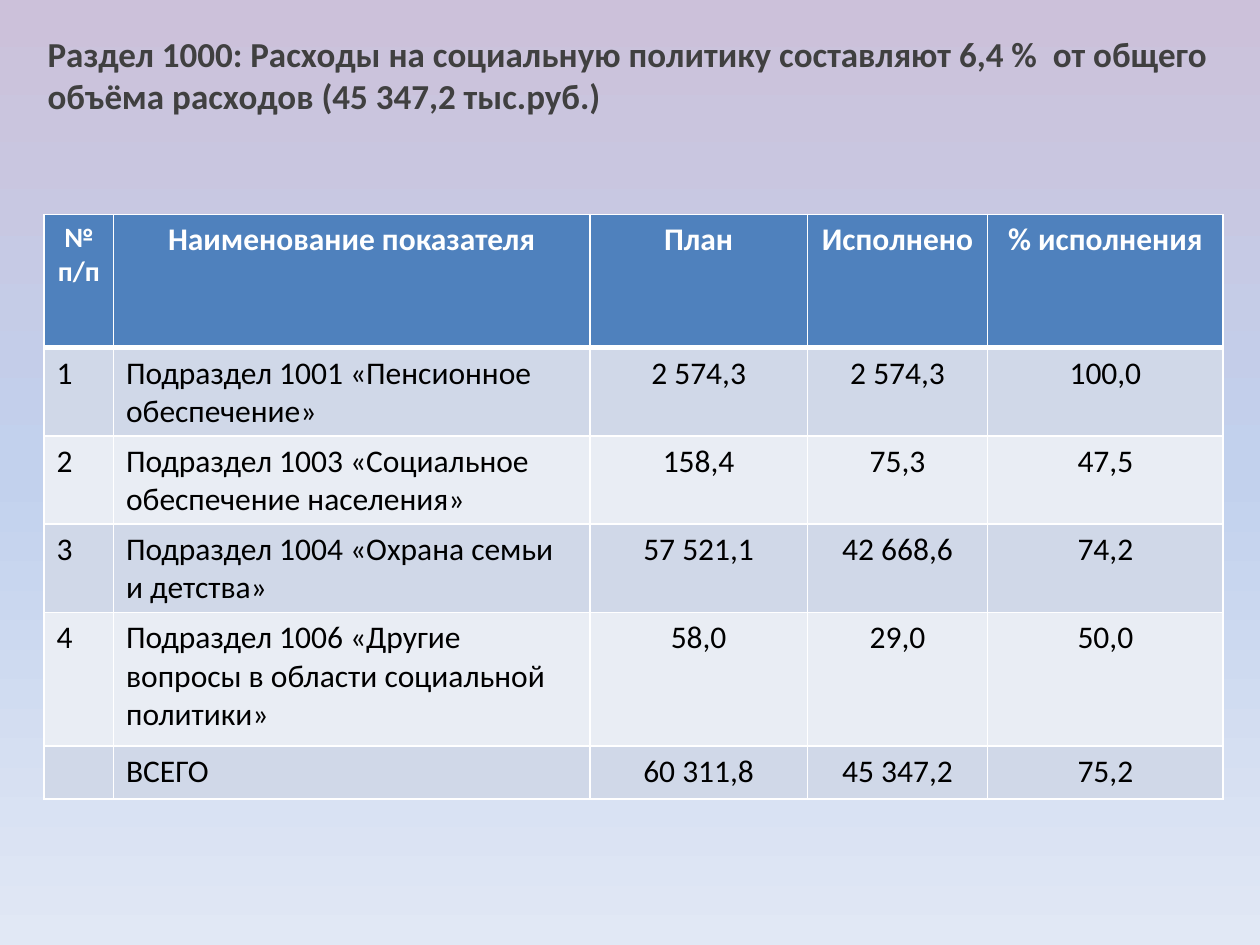
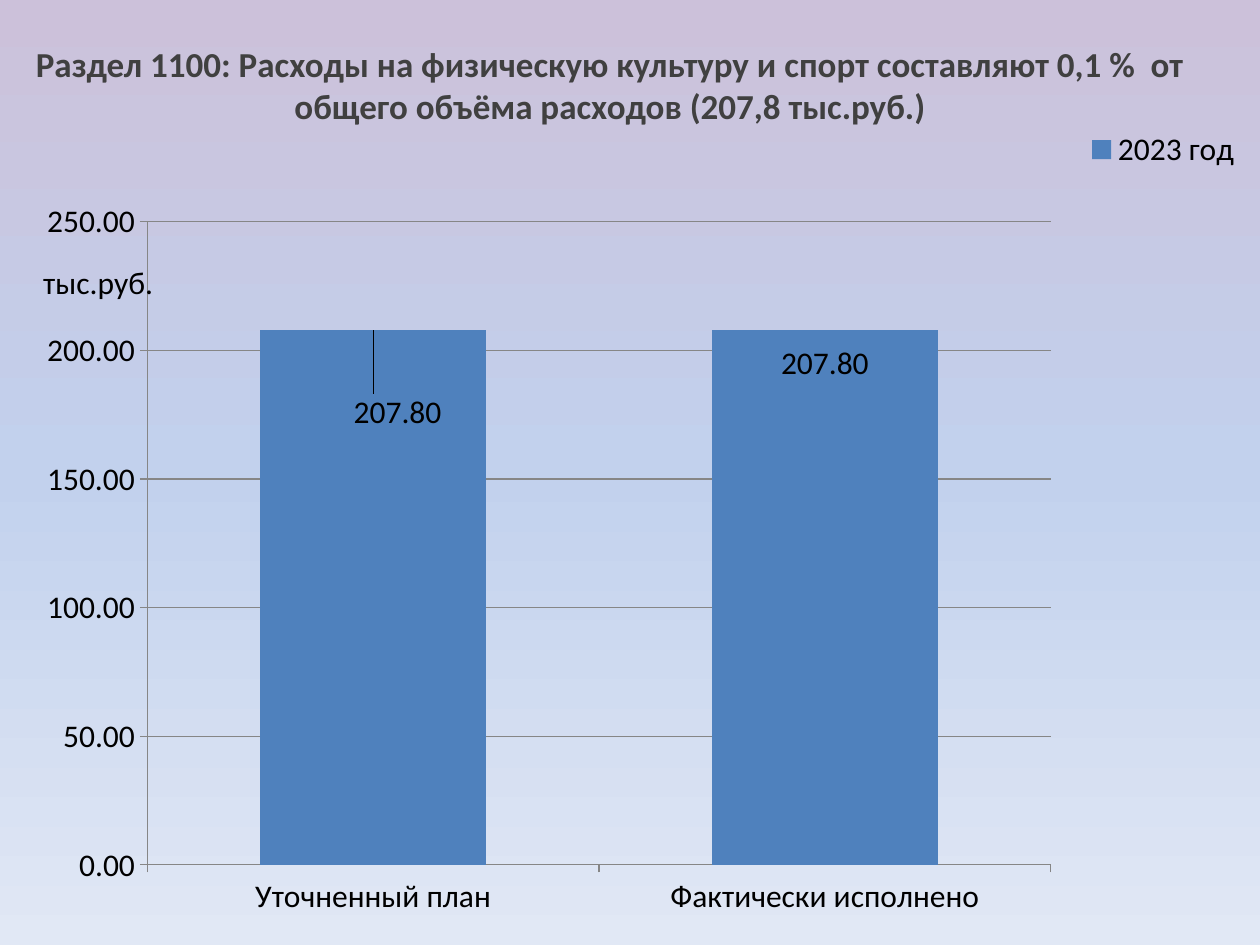
import copy

import pptx
import pptx.chart.data
import pptx.dml.color
import pptx.enum.chart
import pptx.enum.text
import pptx.oxml
import pptx.oxml.ns
import pptx.util

Cm, Pt, qn = pptx.util.Cm, pptx.util.Pt, pptx.oxml.ns.qn
ALIGN = pptx.enum.text.PP_ALIGN
XL = pptx.enum.chart

FONT = "Calibri"
BACKGROUND = [(0, "CCC1DA"), (0.5, "C2D1ED"), (1, "E1E8F5")]
TITLE, BLACK, WHITE = "404040", "000000", "FFFFFF"
BLUE, GREY = "4F81BD", "868686"
BANDS = ["D0D8E8", "E9EDF4"]
NUMBER_FORMAT = "#,##0.00"

COLUMNS = [1.4, 9.6, 4.39, 3.63, 4.75]
ROWS = [2.69, 1.7, 1.73, 1.55, 2.69, 1.07]
SOCIAL_POLICY = [
    ["№ п/п", "Наименование показателя", "План", "Исполнено", "% исполнения"],
    ["1", "Подраздел 1001 «Пенсионное обеспечение»", "2 574,3", "2 574,3", "100,0"],
    ["2", "Подраздел 1003 «Социальное обеспечение населения»", "158,4", "75,3", "47,5"],
    ["3", "Подраздел 1004 «Охрана семьи и детства»", "57 521,1", "42 668,6", "74,2"],
    ["4", "Подраздел 1006 «Другие вопросы в области социальной политики»",
     "58,0", "29,0", "50,0"],
    ["", "ВСЕГО", "60 311,8", "45 347,2", "75,2"],
]


def rgb(color):
    return pptx.dml.color.RGBColor.from_string(color)


def style_font(font, size, color, bold=False):
    font.name, font.size, font.bold = FONT, Pt(size), bold
    font.color.rgb = rgb(color)


def add_text(p, text, size, color, bold=False, align=ALIGN.LEFT):
    p.alignment = align
    r = p.add_run()
    r.text = text
    style_font(r.font, size, color, bold)


def add_slide(prs):
    """Add a blank slide with the shared gradient background."""
    s = prs.slides.add_slide(prs.slide_layouts[6])
    fill = s.background.fill
    fill.gradient()
    fill.gradient_angle = 270
    stop_list = s.element.find(".//" + qn("a:gsLst"))
    stop_list.append(copy.deepcopy(stop_list[0]))
    for stop, (position, color) in zip(fill.gradient_stops, BACKGROUND):
        stop.position = position
        stop.color.rgb = rgb(color)
    return s


def add_title(s, left, top, text, align=ALIGN.LEFT):
    sp = s.shapes.add_textbox(Cm(left), Cm(top), Cm(24), Cm(1.4))
    tf = sp.text_frame
    tf.word_wrap = True
    add_text(tf.paragraphs[0], text, 20, TITLE, True, align)


def add_borders(tc_pr, row):
    """Draw white cell borders, with a thick line under the header row."""
    thick_side = {0: "B", 1: "T"}.get(row)
    for i, side in enumerate("LRTB"):
        width = Pt(3 if side == thick_side else 1)
        tc_pr.insert(i, pptx.oxml.parse_xml(
            f'<a:ln{side} {pptx.oxml.ns.nsdecls("a")} w="{width}"><a:solidFill>'
            f'<a:srgbClr val="{WHITE}"/></a:solidFill></a:ln{side}>'))


def add_table(s, left, top, data):
    frame = s.shapes.add_table(len(ROWS), len(COLUMNS), Cm(left), Cm(top),
                               Cm(sum(COLUMNS)), Cm(sum(ROWS)))
    table = frame.table
    for column, width in zip(table.columns, COLUMNS):
        column.width = Cm(width)
    for i, (row, height) in enumerate(zip(table.rows, ROWS)):
        row.height = Cm(height)
        header = i == 0
        for j, text in enumerate(data[i]):
            cell = row.cells[j]
            cell.fill.solid()
            cell.fill.fore_color.rgb = rgb(BLUE if header else BANDS[(i - 1) % 2])
            if text:
                add_text(cell.text_frame.paragraphs[0], text,
                         16 if header and j == 0 else 18,
                         WHITE if header else BLACK, header,
                         ALIGN.CENTER if header or j > 1 else ALIGN.LEFT)
    for n, tc_pr in enumerate(frame.element.iter(qn("a:tcPr"))):
        add_borders(tc_pr, n // len(COLUMNS))


def set_layout(element, index, **values):
    """Place a chart part by fractions of the chart area."""
    for old in element.findall(qn("c:layout")):
        element.remove(old)
    items = "".join(f'<c:{k} val="{v}"/>' for k, v in values.items())
    element.insert(index, pptx.oxml.parse_xml(
        f'<c:layout {pptx.oxml.ns.nsdecls("c")}><c:manualLayout>{items}'
        '</c:manualLayout></c:layout>'))


def style_axis(axis):
    axis.major_tick_mark = XL.XL_TICK_MARK.OUTSIDE
    axis.minor_tick_mark = XL.XL_TICK_MARK.NONE
    axis.format.line.color.rgb = rgb(GREY)
    axis.format.line.width = Pt(0.75)


def add_labels(series, offsets):
    """Show values, each label moved from the bar end by its offset."""
    labels = series.data_labels
    labels.show_value = True
    labels.number_format, labels.number_format_is_linked = NUMBER_FORMAT, False
    for i, _ in enumerate(offsets):
        label = series.points[i].data_label
        style_font(label.font, 18, BLACK)
        label.position = XL.XL_LABEL_POSITION.OUTSIDE_END
    number_format = labels._element.find(qn("c:numFmt"))
    for label, (x, y) in zip(labels._element.findall(qn("c:dLbl")), offsets):
        set_layout(label, 1, x=x, y=y)
        label.insert(2, copy.deepcopy(number_format))


def add_column_chart(s):
    data = pptx.chart.data.CategoryChartData(number_format=NUMBER_FORMAT)
    data.categories = ["Уточненный план", "Фактически исполнено"]
    data.add_series("2023 год", [207.8, 207.8])
    chart = s.shapes.add_chart(XL.XL_CHART_TYPE.COLUMN_CLUSTERED, Cm(0.51), Cm(2.34),
                               Cm(24.61), Cm(16.41), data).chart
    style_font(chart.font, 18, BLACK)

    chart.has_title = True
    add_text(chart.chart_title.text_frame.paragraphs[0], "тыс.руб.", 18, BLACK)
    chart.has_legend = True
    chart.legend.position = XL.XL_LEGEND_POSITION.CORNER
    chart.legend.include_in_layout = False

    plot = chart.plots[0]
    plot.gap_width, plot.vary_by_categories = 100, False
    series = plot.series[0]
    series.format.fill.solid()
    series.format.fill.fore_color.rgb = rgb(BLUE)
    add_labels(series, [(0.02, 0.13), (0, 0.07)])

    style_axis(chart.category_axis)
    axis = chart.value_axis
    style_axis(axis)
    axis.minimum_scale, axis.maximum_scale, axis.major_unit = 0, 250, 50
    axis.tick_labels.number_format = NUMBER_FORMAT
    axis.tick_labels.number_format_is_linked = False
    axis.has_major_gridlines = True
    axis.major_gridlines.format.line.color.rgb = rgb(GREY)
    axis.major_gridlines.format.line.width = Pt(0.75)

    root = chart.element
    set_layout(root.find(".//" + qn("c:plotArea")), 0, layoutTarget="inner",
               xMode="edge", yMode="edge", x=0.1, y=0.13, w=0.74, h=0.79)
    set_layout(root.find(".//" + qn("c:title")), 1, xMode="edge", yMode="edge",
               x=0.01, y=0.17)
    set_layout(root.find(".//" + qn("c:legend")), 1, xMode="edge", yMode="edge",
               x=0.87, y=0.01)


def main():
    prs = pptx.Presentation()
    prs.slide_width, prs.slide_height = Cm(25.4), Cm(19.05)

    s = add_slide(prs)
    add_title(s, 0.71, 0.53, "Раздел 1000: Расходы на социальную политику составляют "
              "6,4 %  от общего объёма расходов (45 347,2 тыс.руб.)")
    add_table(s, 0.89, 4.32, SOCIAL_POLICY)

    s = add_slide(prs)
    add_title(s, 0.3, 0.74, "Раздел 1100: Расходы на физическую культуру и спорт "
              "составляют 0,1 %  от общего объёма расходов (207,8 тыс.руб.)", ALIGN.CENTER)
    add_column_chart(s)

    prs.save("out.pptx")


if __name__ == "__main__":
    main()
